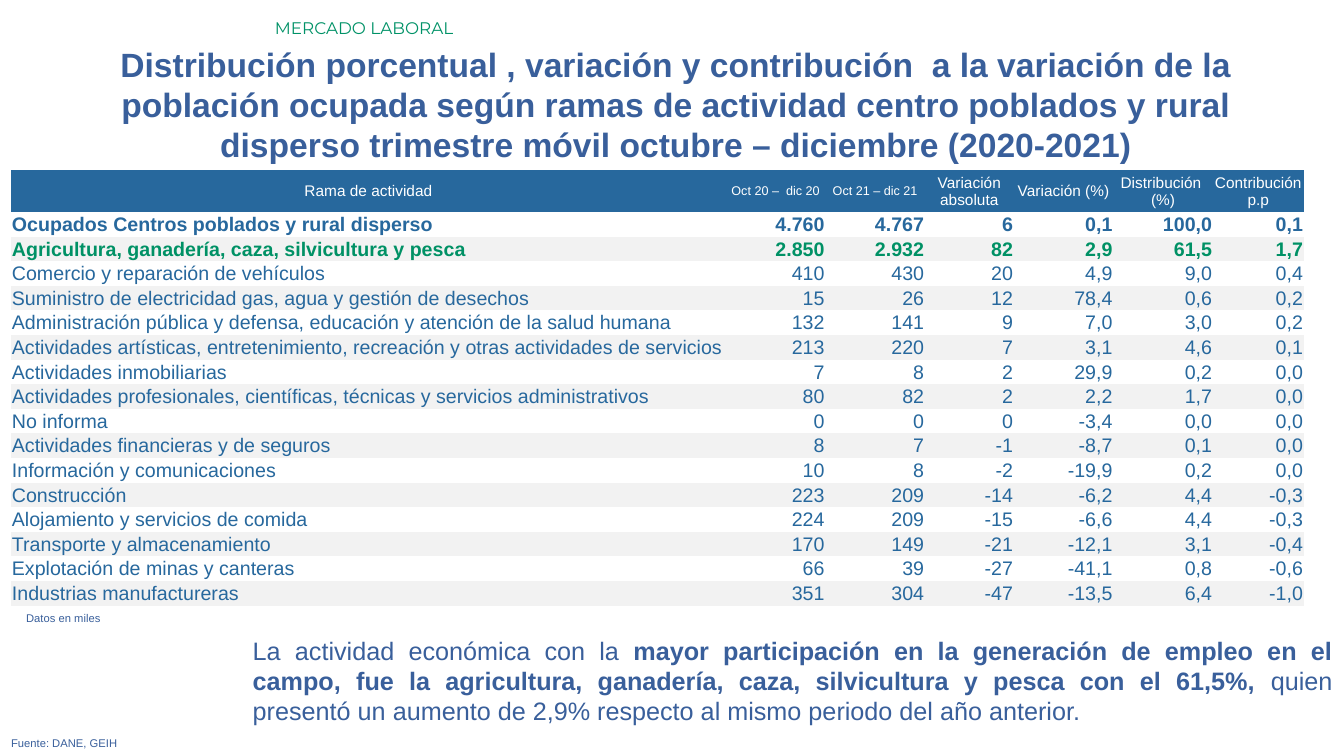
from pptx import Presentation
from pptx.dml.color import RGBColor as RGB
from pptx.enum.text import MSO_ANCHOR as Anchor, MSO_AUTO_SIZE as AutoSize, PP_ALIGN as Align
from pptx.util import Cm, Pt

COLORS = {
    "text": "395F9B",
    "label": "009267",
    "table": "27689D",
    "highlight": "009165",
    "band": "F2F2F2",
    "white": "FFFFFF",
}
NO_STYLE = "{2D5ABB26-0587-4C30-8999-92F81FD0307C}"

HEADER = [
    ("Rama de actividad", 11),
    ("Oct 20 –  dic 20", 9),
    ("Oct 21 – dic 21", 9),
    ("Variación\vabsoluta", 11),
    ("Variación (%)", 11),
    ("Distribución \n(%)", 11),
    ("Contribución \np.p", 11),
]
ROWS = [
    ("Ocupados Centros poblados y rural disperso", "4.760 4.767 6 0,1 100,0 0,1"),
    ("Agricultura, ganadería, caza, silvicultura y pesca", "2.850 2.932 82 2,9 61,5 1,7"),
    ("Comercio y reparación de vehículos", "410 430 20 4,9 9,0 0,4"),
    ("Suministro de electricidad gas, agua y gestión de desechos", "15 26 12 78,4 0,6 0,2"),
    ("Administración pública y defensa, educación y atención de la salud humana",
     "132 141 9 7,0 3,0 0,2"),
    ("Actividades artísticas, entretenimiento, recreación y otras actividades de servicios",
     "213 220 7 3,1 4,6 0,1"),
    ("Actividades inmobiliarias", "7 8 2 29,9 0,2 0,0"),
    ("Actividades profesionales, científicas, técnicas y servicios administrativos",
     "80 82 2 2,2 1,7 0,0"),
    ("No informa", "0 0 0 -3,4 0,0 0,0"),
    ("Actividades financieras y de seguros", "8 7 -1 -8,7 0,1 0,0"),
    ("Información y comunicaciones", "10 8 -2 -19,9 0,2 0,0"),
    ("Construcción", "223 209 -14 -6,2 4,4 -0,3"),
    ("Alojamiento y servicios de comida", "224 209 -15 -6,6 4,4 -0,3"),
    ("Transporte y almacenamiento", "170 149 -21 -12,1 3,1 -0,4"),
    ("Explotación de minas y canteras", "66 39 -27 -41,1 0,8 -0,6"),
    ("Industrias manufactureras", "351 304 -47 -13,5 6,4 -1,0"),
]
COLUMN_WIDTHS = [18.01, 2.51, 2.51, 2.24, 2.51, 2.51, 2.29]
HEADER_HEIGHT, ROW_HEIGHT = 1.05, 0.62


class SlideBuilder:
    def __init__(self, slide, font="Arial"):
        self.s = slide
        self.font = font

    def style(self, r, size, color, bold=False, font=None):
        r.font.name = font or self.font
        r.font.size = Pt(size)
        r.font.bold = bold
        r.font.color.rgb = RGB.from_string(COLORS[color])

    def text(self, box, parts, size, color="text", align=Align.LEFT, font=None):
        sp = self.s.shapes.add_textbox(*(Cm(v) for v in box))
        tf = sp.text_frame
        tf.word_wrap = True
        tf.auto_size = AutoSize.SHAPE_TO_FIT_TEXT
        p = tf.paragraphs[0]
        p.alignment = align
        for content, bold in parts:
            r = p.add_run()
            r.text = content
            self.style(r, size, color, bold, font)

    def cell(self, cell, content, size, color, align, bold=False, fill=None):
        cell.margin_left = cell.margin_right = cell.margin_top = Cm(0.02)
        cell.margin_bottom = 0
        cell.vertical_anchor = Anchor.MIDDLE
        if fill:
            cell.fill.solid()
            cell.fill.fore_color.rgb = RGB.from_string(COLORS[fill])
        else:
            cell.fill.background()
        cell.text_frame.text = content
        for p in cell.text_frame.paragraphs:
            p.alignment = align
            for r in p.runs:
                self.style(r, size, color, bold)

    def table(self, left, top):
        height = HEADER_HEIGHT + ROW_HEIGHT * len(ROWS)
        frame = self.s.shapes.add_table(
            len(ROWS) + 1, len(HEADER), Cm(left), Cm(top), Cm(sum(COLUMN_WIDTHS)), Cm(height))
        for style_id in frame.element.iter("{*}tableStyleId"):
            style_id.text = NO_STYLE
        table = frame.table
        table.first_row = table.horz_banding = False
        for column, width in zip(table.columns, COLUMN_WIDTHS):
            column.width = Cm(width)
        for i, row in enumerate(table.rows):
            row.height = Cm(ROW_HEIGHT if i else HEADER_HEIGHT)
        for j, (title, size) in enumerate(HEADER):
            self.cell(table.cell(0, j), title, size, "white", Align.CENTER, fill="table")
        for i, (activity, values) in enumerate(ROWS, 1):
            color = "highlight" if i == 2 else "table"
            fill = "band" if i % 2 == 0 else None
            for j, content in enumerate([activity, *values.split()]):
                align = Align.RIGHT if j else Align.LEFT
                self.cell(table.cell(i, j), content, 14, color, align, i <= 2, fill)


def main():
    prs = Presentation()
    prs.slide_width, prs.slide_height = Cm(33.87), Cm(19.05)
    b = SlideBuilder(prs.slides.add_slide(prs.slide_layouts[6]))

    b.text((1.14, 0.97, 31.78, 3.33), [
        ("Distribución porcentual , variación y contribución  a la variación de la población "
         "ocupada según ramas de actividad centro poblados y rural disperso trimestre móvil "
         "octubre – diciembre (2020-2021)", True),
    ], 24, align=Align.CENTER)
    b.text((6.68, 0.33, 27.18, 0.76), [("MERCADO LABORAL", False)], 12, "label",
           font="Montserrat")
    b.text((6.12, 15.88, 27.71, 2.57), [
        ("La actividad económica con la ", False),
        ("mayor participación en la generación de empleo en el campo, fue la agricultura, "
         "ganadería, caza, silvicultura y pesca con el 61,5%, ", True),
        ("quien presentó un aumento de 2,9% respecto al mismo periodo del año anterior.", False),
    ], 18, align=Align.JUSTIFY)
    b.text((0.03, 18.42, 32.79, 0.61), [("Fuente: DANE, GEIH", False)], 8, align=Align.JUSTIFY)
    b.table(0.28, 4.29)
    b.text((0.41, 15.29, 32.79, 0.61), [("Datos en miles", False)], 8, align=Align.JUSTIFY)

    prs.save("out.pptx")


if __name__ == "__main__":
    main()
